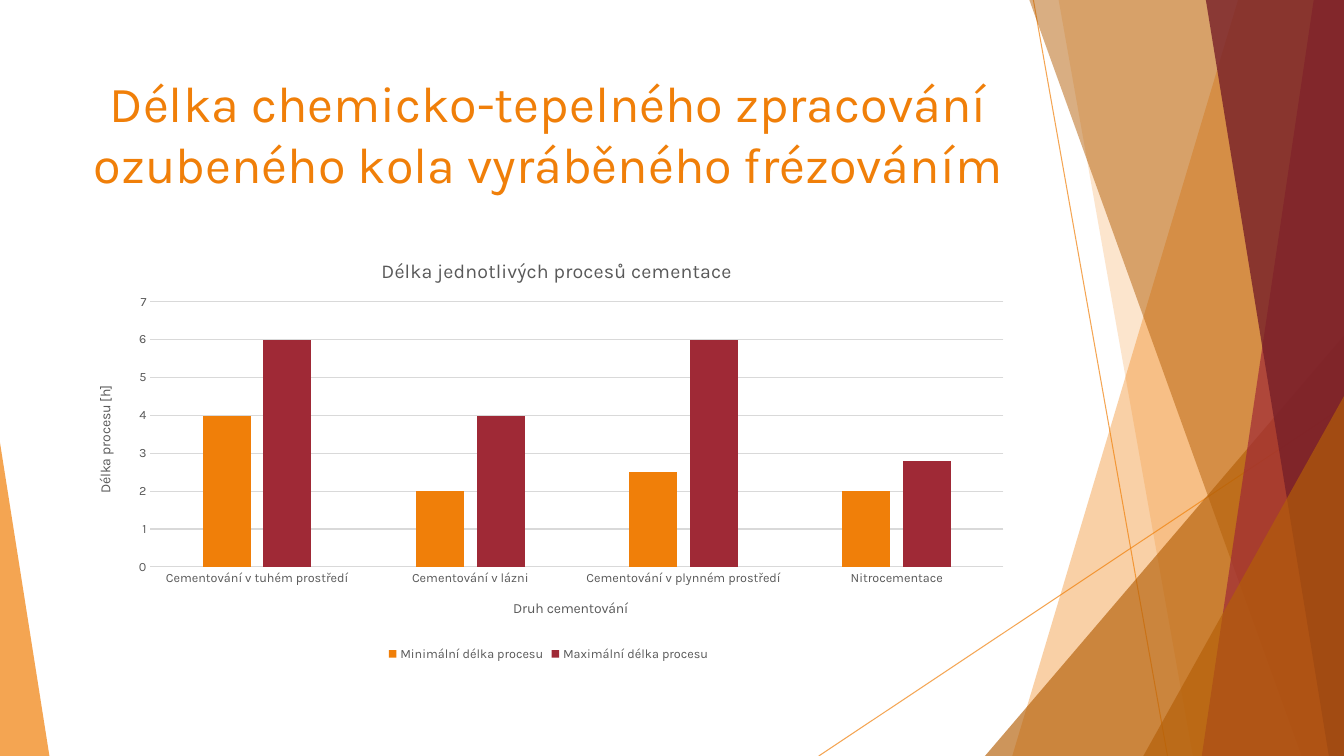
from dataclasses import dataclass

from lxml.etree import SubElement
from pptx import Presentation
from pptx.chart.data import CategoryChartData
from pptx.dml.color import RGBColor
from pptx.enum.chart import XL_CHART_TYPE, XL_LEGEND_POSITION, XL_TICK_MARK
from pptx.enum.shapes import MSO_CONNECTOR, MSO_SHAPE
from pptx.enum.text import MSO_ANCHOR, MSO_AUTO_SIZE, PP_ALIGN
from pptx.oxml import parse_xml
from pptx.oxml.ns import nsdecls, qn
from pptx.util import Inches, Pt

COLORS = {"orange": "F07F09", "brown": "B45F07", "red": "9F2936",
          "wine": "771F28", "text": "595959", "grid": "D9D9D9"}
FONT = "Karla"

prs = Presentation()
prs.slide_width, prs.slide_height = Inches(13.33), Inches(7.5)
s = prs.slides.add_slide(prs.slide_layouts[5])


# Positions are percentages of the slide's width and height
def col(share: float) -> int:
    return round(prs.slide_width * share / 100)


def row(share: float) -> int:
    return round(prs.slide_height * share / 100)


def rgb(name: str) -> RGBColor:
    return RGBColor.from_string(COLORS[name])


@dataclass
class Ray:
    x1: float
    y1: float
    x2: float
    y2: float


@dataclass
class Band:
    """Reaches from a slanted left side to the right slide edge."""
    top: float
    bottom: float
    color: str
    opacity: int


@dataclass
class Wedge:
    """Right triangle standing on the bottom slide edge."""
    left: float
    top: float
    width: float
    peak: float
    color: str
    opacity: int


def set_opacity(fill_parent, opacity: int) -> None:
    clr = next(fill_parent.iter(qn("a:srgbClr")))
    SubElement(clr, qn("a:alpha"), val=str(opacity * 1000))


def paint(sp, color: str, opacity: int) -> None:
    sp.shadow.inherit = False
    sp.fill.solid()
    sp.fill.fore_color.rgb = rgb(color)
    set_opacity(sp._element.spPr, opacity)
    sp.line.fill.background()


def draw_ray(ray: Ray) -> None:
    line = s.shapes.add_connector(MSO_CONNECTOR.STRAIGHT, col(ray.x1), row(ray.y1),
                                  col(ray.x2), row(ray.y2))
    line.line.color.rgb = rgb("orange")
    line.line.width = Pt(0.75)
    set_opacity(line._element.spPr, 70)
    SubElement(line._element.spPr, qn("a:effectLst"))


def draw_band(band: Band) -> None:
    outline = s.shapes.build_freeform(col(band.top), 0)
    outline.add_line_segments([(col(100), 0), (col(100), row(100)),
                               (col(band.bottom), row(100))], close=True)
    paint(outline.convert_to_shape(), band.color, band.opacity)


def draw_wedge(wedge: Wedge) -> None:
    sp = s.shapes.add_shape(MSO_SHAPE.ISOSCELES_TRIANGLE, col(wedge.left), row(wedge.top),
                            col(wedge.width), row(100 - wedge.top))
    sp.adjustments[0] = wedge.peak
    paint(sp, wedge.color, wedge.opacity)


# Background decoration, back to front
DRAW = {Ray: draw_ray, Band: draw_band, Wedge: draw_wedge}
DECOR = [
    Ray(76.89, 0, 86.87, 100),
    Ray(100, 53.73, 60.92, 100),
    Band(92.12, 75.32, "orange", 36),
    Band(78.77, 88.75, "orange", 20),
    Wedge(73.29, 44.4, 26.71, 1, "brown", 66),
    Band(76.59, 96.85, "brown", 50),
    Band(97.75, 89.42, "red", 70),
    Band(89.72, 98.87, "wine", 80),
    Wedge(85.07, 52.4, 14.93, 1, "brown", 66),
    Wedge(0, 58.53, 3.68, 0, "orange", 70),
]
for part in DECOR:
    DRAW[type(part)](part)


def format_font(font, size: float, color: str) -> None:
    for name, value in {"name": FONT, "size": Pt(size), "bold": False}.items():
        setattr(font, name, value)
    font.color.rgb = rgb(color)


# Title, brought in front of the decoration
title = s.shapes.title
s.shapes._spTree.append(title._element)
title.left, title.top, title.width, title.height = col(5.55), row(8.93), col(70.52), row(19.2)
tf = title.text_frame
for name, value in {"word_wrap": True, "auto_size": MSO_AUTO_SIZE.NONE,
                    "vertical_anchor": MSO_ANCHOR.TOP}.items():
    setattr(tf, name, value)
p = tf.paragraphs[0]
p.alignment = PP_ALIGN.CENTER
r = p.add_run()
r.text = "Délka chemicko-tepelného zpracování ozubeného kola vyráběného frézováním"
format_font(r.font, 36, "orange")

# Chart
data = CategoryChartData()
data.categories = ["Cementování v tuhém prostředí", "Cementování v lázni",
                   "Cementování v plynném prostředí", "Nitrocementace"]
SERIES = {"Minimální délka procesu": ([4, 2, 2.5, 2], "orange"),
          "Maximální délka procesu": ([6, 4, 6, 2.8], "red")}
for name, (values, _) in SERIES.items():
    data.add_series(name, values)
chart = s.shapes.add_chart(XL_CHART_TYPE.COLUMN_CLUSTERED, col(5.55), row(31.47),
                           col(70.52), row(56.53), data).chart
format_font(chart.font, 9, "text")
plot = chart.plots[0]
for name, value in {"gap_width": 219, "overlap": -27, "vary_by_categories": False}.items():
    setattr(plot, name, value)
for series in plot.series:
    series.format.fill.solid()
    series.format.fill.fore_color.rgb = rgb(SERIES[series.name][1])


def place(element, **shares: float) -> None:
    """Put a chart part at shares of the chart's size."""
    old = element.find(qn("c:layout"))
    if old is not None:
        element.remove(old)
    modes = {"xMode": "edge", "yMode": "edge"}
    if "w" in shares:
        modes["layoutTarget"] = "inner"
    tags = {**modes, **shares}
    order = ["layoutTarget", "xMode", "yMode", "x", "y", "w", "h"]
    inner = "".join(f'<c:{t} val="{tags[t]}"/>' for t in order if t in tags)
    layout = parse_xml(f'<c:layout {nsdecls("c")}><c:manualLayout>{inner}'
                       '</c:manualLayout></c:layout>')
    element.insert(0 if element.find(qn("c:tx")) is None else 1, layout)


def add_title(owner, text: str, size: float, x: float, y: float) -> None:
    heading = owner.chart_title if owner is chart else owner.axis_title
    p = heading.text_frame.paragraphs[0]
    r = p.add_run()
    r.text = text
    format_font(r.font, size, "text")
    place(heading._element, x=x, y=y)


# Axes and gridlines
cat, val = chart.category_axis, chart.value_axis
for axis in (cat, val):
    axis.major_tick_mark = axis.minor_tick_mark = XL_TICK_MARK.NONE
    format_font(axis.tick_labels.font, 9, "text")
val.minimum_scale, val.maximum_scale, val.major_unit = 0, 7, 1
val.format.line.fill.background()
for line in (cat.format.line, val.major_gridlines.format.line):
    line.color.rgb = rgb("grid")
    line.width = Pt(0.75)

# Chart titles, plot area and legend
add_title(chart, "Délka jednotlivých procesů cementace", 14, 0.32, 0.04)
add_title(cat, "Druh cementování", 10, 0.46, 0.84)
add_title(val, "Délka procesu [h]", 10, 0.02, 0.34)
place(chart._chartSpace.chart.plotArea, x=0.08, y=0.15, w=0.9, h=0.62)
chart.has_legend = True
legend = chart.legend
legend.position = XL_LEGEND_POSITION.BOTTOM
legend.include_in_layout = False
format_font(legend.font, 9, "text")

prs.save("out.pptx")
